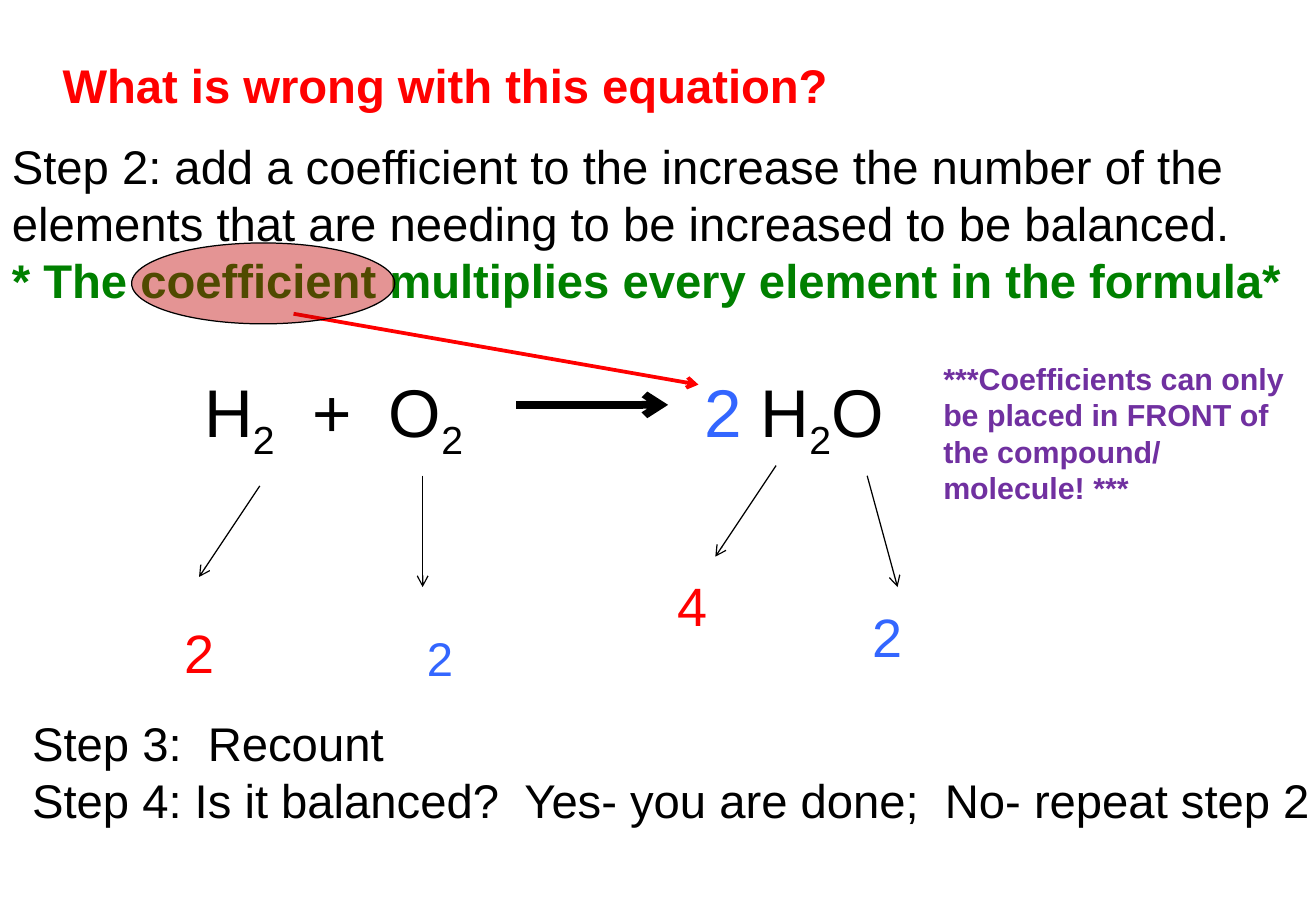
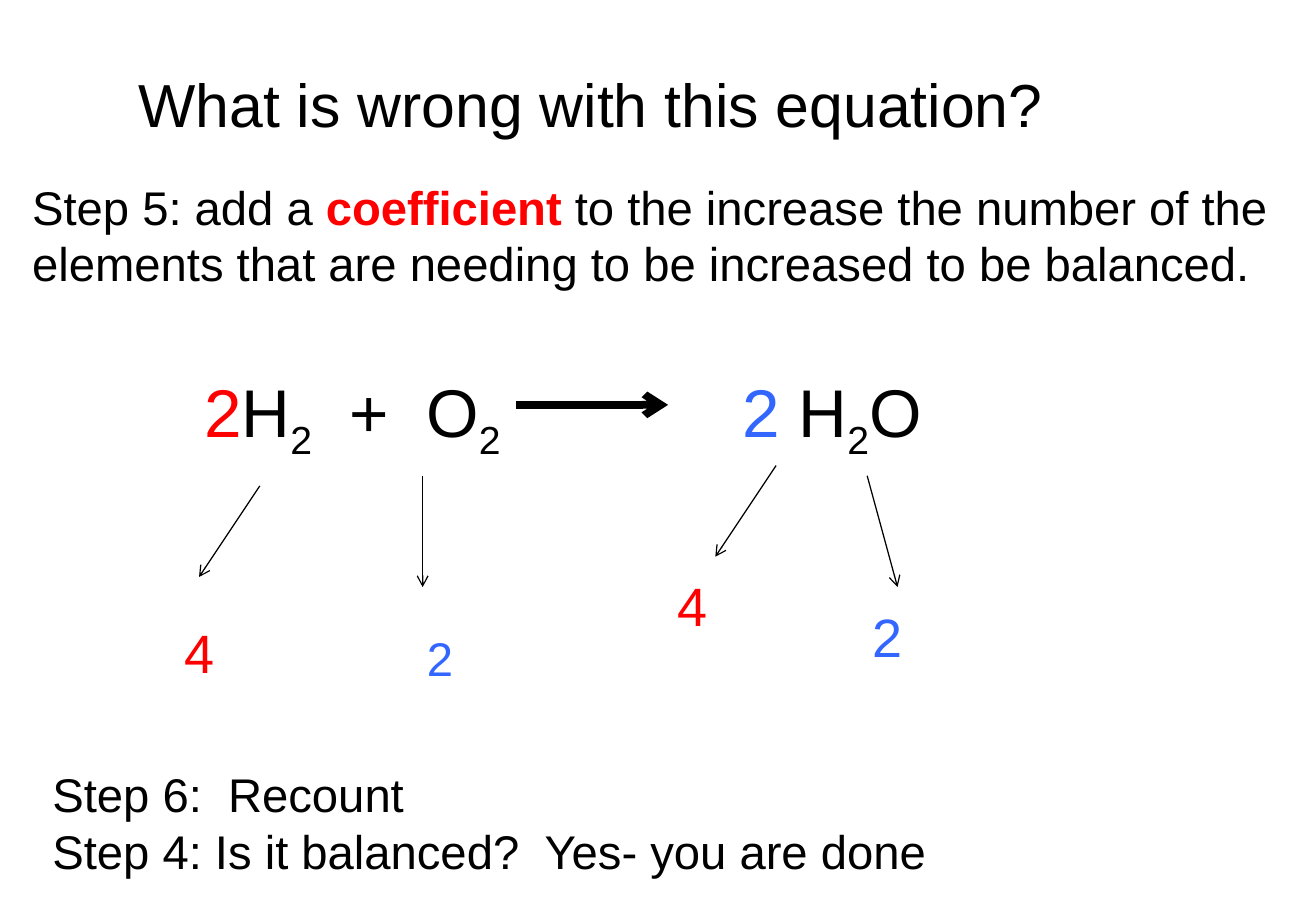
from dataclasses import dataclass

from lxml.etree import SubElement
from pptx import Presentation
from pptx.dml.color import RGBColor
from pptx.enum.shapes import MSO_CONNECTOR, MSO_SHAPE
from pptx.oxml.ns import qn
from pptx.util import Pt


@dataclass(frozen=True)
class Theme:
    font: str = "Arial"
    black: str = "000000"
    red: str = "FF0000"
    blue: str = "3366FF"
    green: str = "008000"
    purple: str = "7030A0"
    dark_red: str = "C00000"
    note: int = 18
    body: int = 28
    count: int = 32
    title: int = 36
    formula: int = 40
    thin: float = 0.75
    medium: float = 2.25
    thick: float = 4.5


@dataclass(frozen=True)
class Span:
    text: str
    color: str = ""
    bold: bool = False
    subscript: bool = False


THEME = Theme()
SUBSCRIPT_TWO = Span("2", subscript=True)
REACTANTS = [Span("H"), SUBSCRIPT_TWO, Span("  +  O"), SUBSCRIPT_TWO]
PRODUCT = [Span("2", THEME.blue), Span(" H"), SUBSCRIPT_TWO, Span("O")]
TITLE = "What is wrong with this equation?"
ATOM_ARROWS = [
    ((154, 288), (118, 342)),
    ((250.5, 282), (250.5, 348)),
    ((460, 276), (424, 330)),
    ((514, 282), (532, 348)),
]
COUNT_STYLES = [
    ((102, 363.5, 32, 46), THEME.count, THEME.red),
    ((246, 369.5, 30, 41), THEME.body, THEME.blue),
    ((394.5, 336, 38, 46), THEME.count, THEME.red),
    ((510, 354, 55, 46), THEME.count, THEME.blue),
]


def rgb(color):
    return RGBColor.from_string(color)


def add_text_box(slide, box):
    frame = slide.shapes.add_textbox(*map(Pt, box)).text_frame
    frame.word_wrap = True
    return frame


def style_paragraph(paragraph, spans, size, color, bold):
    font = paragraph.font
    font.name, font.size, font.bold = THEME.font, Pt(size), bold
    font.color.rgb = rgb(color)
    for span in spans:
        run = paragraph.add_run()
        run.text = span.text
        if span.color:
            run.font.color.rgb = rgb(span.color)
        if span.bold:
            run.font.bold = True
        if span.subscript:
            run.font._element.set("baseline", "-25000")


def add_text(slide, box, spans, size=THEME.body, color=THEME.black, bold=False):
    frame = add_text_box(slide, box)
    style_paragraph(frame.paragraphs[0], spans, size, color, bold)
    return frame


def add_line_of_text(frame, text, color=THEME.black, bold=False):
    style_paragraph(frame.add_paragraph(), [Span(text)], THEME.body, color, bold)


def add_arrow(slide, start, end, color=THEME.black, width=THEME.thin):
    connector = slide.shapes.add_connector(
        MSO_CONNECTOR.STRAIGHT, *map(Pt, (*start, *end)))
    connector.line.color.rgb = rgb(color)
    connector.line.width = Pt(width)
    SubElement(connector.line._get_or_add_ln(), qn("a:tailEnd"), type="arrow")
    SubElement(connector._element.spPr, qn("a:effectLst"))


def add_highlight(slide, box, opacity):
    ellipse = slide.shapes.add_shape(MSO_SHAPE.OVAL, *map(Pt, box))
    ellipse.shadow.inherit = False
    ellipse.fill.solid()
    ellipse.fill.fore_color.rgb = rgb(THEME.dark_red)
    color = ellipse._element.spPr.find(qn("a:solidFill")).find(qn("a:srgbClr"))
    SubElement(color, qn("a:alpha"), val=str(opacity * 1000))
    ellipse.line.color.rgb = rgb(THEME.black)
    ellipse.line.width = Pt(THEME.thin)


def add_equation(slide, reactants, product_left, counts):
    add_text(slide, (114, 216, 220, 55), reactants, THEME.formula)
    add_text(slide, (product_left, 216, 150, 55), PRODUCT, THEME.formula)
    add_arrow(slide, (306, 240), (396, 240), width=THEME.thick)
    for start, end in ATOM_ARROWS:
        add_arrow(slide, start, end)
    for count, (box, size, color) in zip(counts, COUNT_STYLES):
        add_text(slide, box, [Span(count)], size, color)


def build_step_two(slide):
    add_text(slide, (30, 30, 480, 41), [Span(TITLE)], color=THEME.red, bold=True)
    add_equation(slide, REACTANTS, 410.5, "2242")
    instruction = add_text(slide, (0, 78, 780, 109), [Span(
        "Step 2: add a coefficient to the increase the number of the "
        "elements that are needing to be increased to be balanced.")])
    add_line_of_text(
        instruction, "* The coefficient multiplies every element in the formula*",
        THEME.green, True)
    check = add_text(slide, (12, 420, 780, 75), [Span("Step 3:  Recount")])
    add_line_of_text(
        check, "Step 4: Is it balanced?  Yes- you are done;  No- repeat step 2")
    add_arrow(slide, (174, 186), (414, 228), THEME.red, THEME.medium)
    add_highlight(slide, (78, 144, 156, 48), 42)
    add_text(slide, (552, 210, 228, 94), [Span(
        "***Coefficients can only be placed in FRONT of the compound/ "
        "molecule! ***")], THEME.note, THEME.purple, True)


def build_step_five(slide):
    add_text(slide, (75, 36, 560, 51), [Span(TITLE)], THEME.title)
    add_text(slide, (12, 102, 756, 75), [
        Span("Step 5: add a "),
        Span("coefficient", THEME.red, bold=True),
        Span(" to the increase the number of the elements that are needing "
             "to be increased to be balanced."),
    ])
    add_equation(slide, [Span("2", THEME.red), *REACTANTS], 433, "4242")
    check = add_text(slide, (24, 450, 648, 75), [Span("Step 6:  Recount")])
    add_line_of_text(check, "Step 4: Is it balanced?  Yes- you are done")


def main():
    presentation = Presentation()
    presentation.slide_width, presentation.slide_height = Pt(780), Pt(540)
    blank_layout = presentation.slide_layouts[6]
    for build in (build_step_two, build_step_five):
        build(presentation.slides.add_slide(blank_layout))
    presentation.save("out.pptx")


if __name__ == "__main__":
    main()
